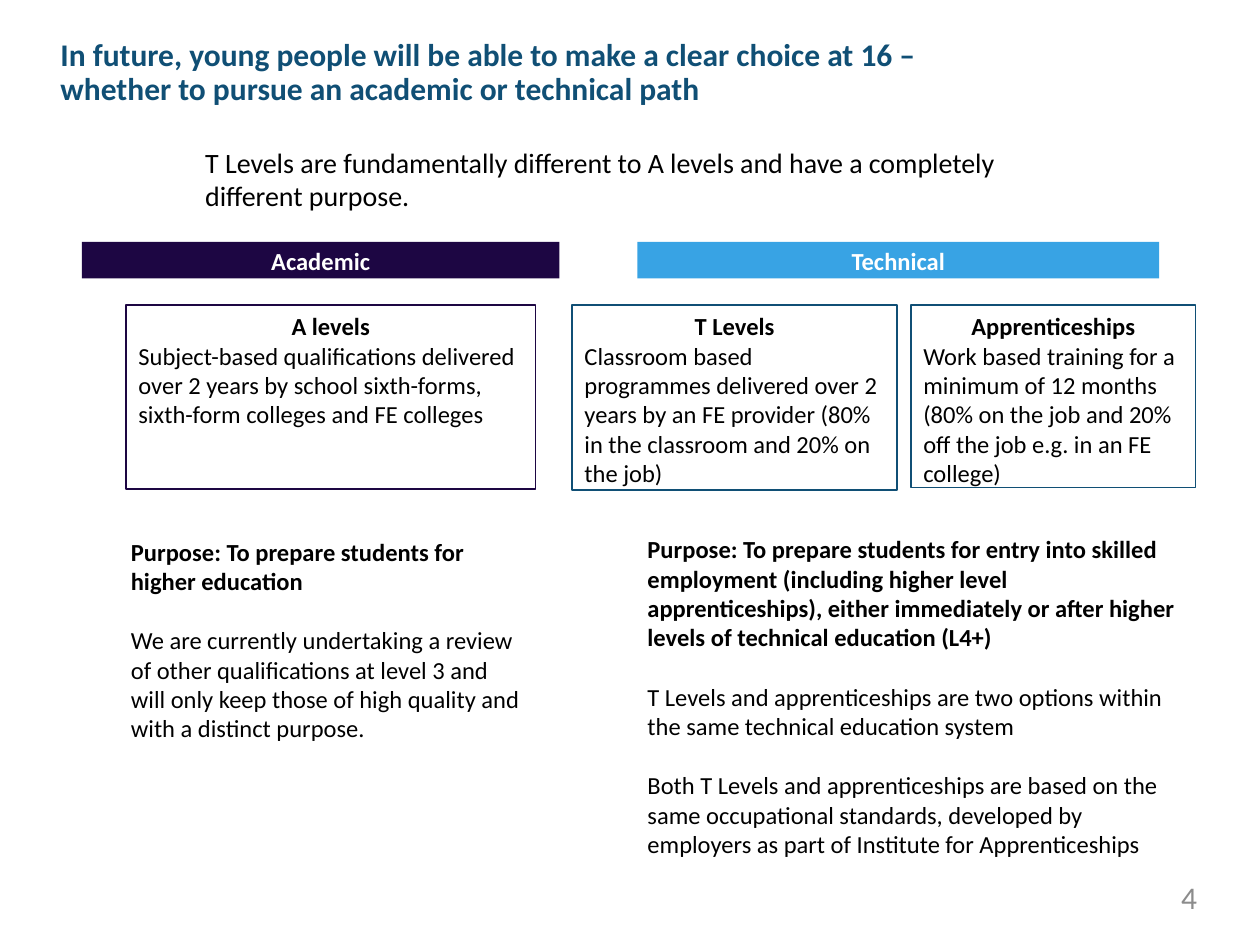
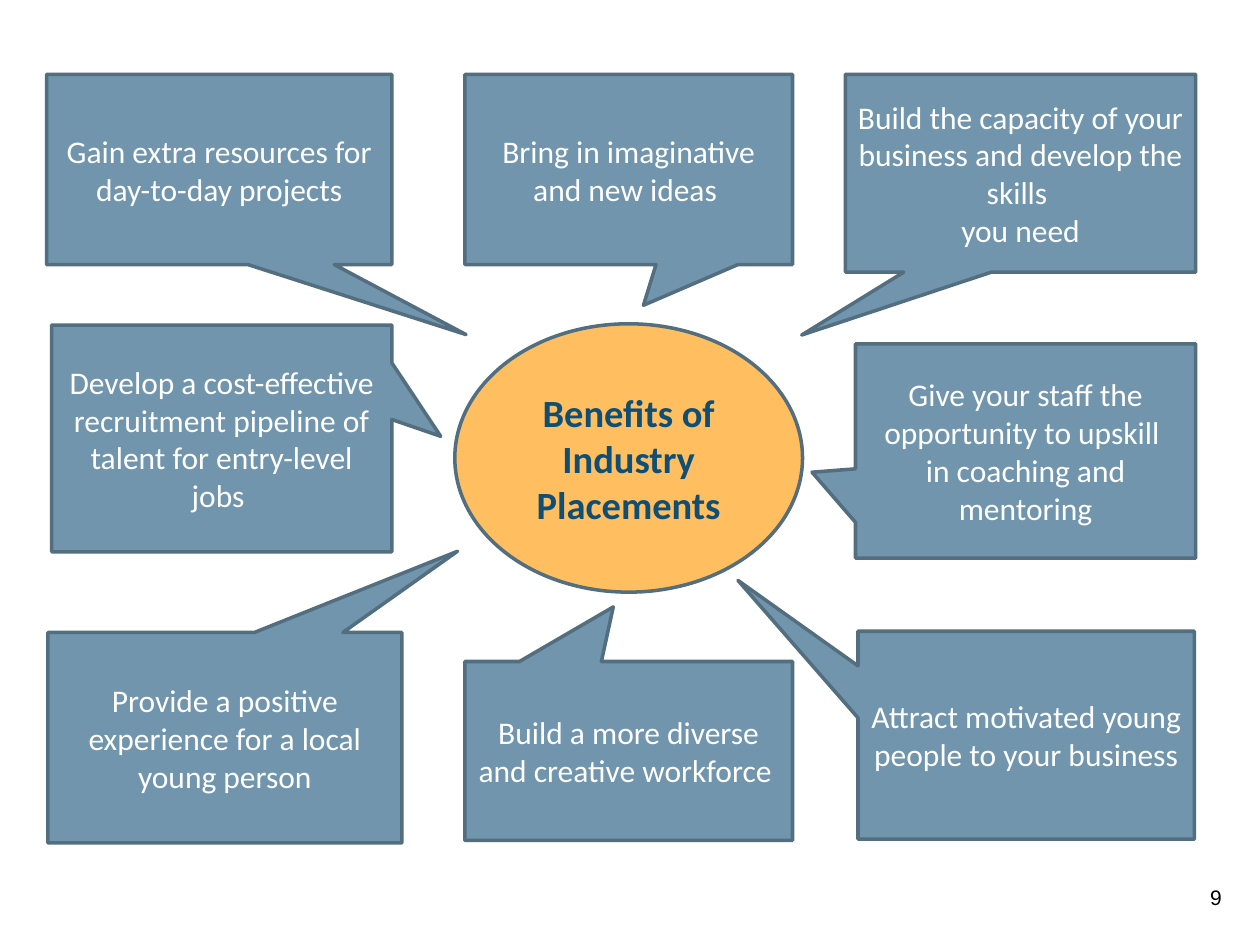
"""Build two slides on T Levels and the benefits of industry placements."""

from dataclasses import dataclass
from typing import Optional

from pptx import Presentation
from pptx.dml.color import RGBColor
from pptx.enum.shapes import MSO_SHAPE as Shape
from pptx.enum.text import MSO_ANCHOR as Anchor, MSO_AUTO_SIZE as AutoSize, PP_ALIGN as Align
from pptx.util import Inches, Pt

NAVY = RGBColor(0x10, 0x4F, 0x75)
PURPLE = RGBColor(0x1D, 0x06, 0x43)
SKY = RGBColor(0x38, 0xA3, 0xE4)
STEEL = RGBColor(0x70, 0x95, 0xAC)
SLATE = RGBColor(0x53, 0x6E, 0x7F)
AMBER = RGBColor(0xFF, 0xBF, 0x61)
GREY = RGBColor(0x8C, 0x8C, 0x8C)
BLACK = RGBColor(0x00, 0x00, 0x00)
WHITE = RGBColor(0xFF, 0xFF, 0xFF)
FONT = "Calibri"
PARAGRAPH_GAP = 17


@dataclass(frozen=True)
class Area:
    left: float
    top: float
    width: float
    height: float


@dataclass(frozen=True)
class Band:
    area: Area
    label: str
    color: RGBColor


@dataclass(frozen=True)
class Route:
    area: Area
    name: str
    description: str
    border: RGBColor


@dataclass(frozen=True)
class Purpose:
    area: Area
    statement: str
    details: tuple[str, ...]


@dataclass(frozen=True)
class Benefit:
    area: Area
    text: str
    pointer: tuple[float, float]


BANDS = (
    Band(Area(0.65, 1.92, 3.79, 0.29), "Academic", PURPLE),
    Band(Area(5.06, 1.92, 4.14, 0.29), "Technical", SKY),
)

ROUTES = (
    Route(Area(1, 2.42, 3.25, 1.46), "A levels",
          "Subject-based qualifications delivered over 2 years by school sixth-forms, "
          "sixth-form colleges and FE colleges", PURPLE),
    Route(Area(4.54, 2.42, 2.58, 1.47), "T Levels",
          "Classroom based programmes delivered over 2 years by an FE provider "
          "(80% in the classroom and 20% on the job)", NAVY),
    Route(Area(7.23, 2.42, 2.26, 1.45), "Apprenticeships",
          "Work based training for a minimum of 12 months "
          "(80% on the job and 20% off the job e.g. in an FE college)", NAVY),
)

PURPOSES = (
    Purpose(Area(0.94, 4.21, 3.35, 1.99),
            "Purpose: To prepare students for higher education",
            ("We are currently undertaking a review of other qualifications at level 3 and "
             "will only keep those of high quality and with a distinct purpose.",)),
    Purpose(Area(5.04, 4.19, 4.39, 2.93),
            "Purpose: To prepare students for entry into skilled employment (including higher "
            "level apprenticeships), either immediately or after higher levels of technical "
            "education (L4+)",
            ("T Levels and apprenticeships are two options within the same technical "
             "education system",
             "Both T Levels and apprenticeships are based on the same occupational standards, "
             "developed by employers as part of Institute for Apprenticeships")),
)

BENEFITS = (
    Benefit(Area(0.37, 0.59, 2.74, 1.51),
            "Gain extra resources for day-to-day projects", (0.715, 0.868)),
    Benefit(Area(3.69, 0.59, 2.6, 1.51),
            "Bring in imaginative and new ideas ", (0.045, 0.714)),
    Benefit(Area(6.71, 0.59, 2.78, 1.57),
            "Build the capacity of your business and develop the skills \nyou need",
            (-0.625, 0.818)),
    Benefit(Area(0.41, 2.58, 2.7, 1.8),
            "Develop a cost-effective recruitment pipeline of talent for entry-level jobs ",
            (0.644, -0.009)),
    Benefit(Area(6.79, 2.73, 2.7, 1.7),
            "Give your staff the opportunity to upskill \nin coaching and mentoring",
            (-0.628, 0.099)),
    Benefit(Area(0.38, 5.02, 2.81, 1.67),
            "Provide a positive experience for a local young person", (0.657, -0.886)),
    Benefit(Area(3.69, 5.25, 2.6, 1.42),
            "Build a more diverse and creative workforce ", (-0.047, -0.805)),
    Benefit(Area(6.81, 5.01, 2.67, 1.65),
            "Attract motivated young people to your business", (-0.857, -0.745)),
)


def lengths(area: Area) -> tuple:
    """Convert an area to slide lengths."""
    return tuple(Inches(value) for value in (area.left, area.top, area.width, area.height))


def write(frame, text: str, *, size: float = 14, color: RGBColor = BLACK, bold: bool = False,
          align: Align = Align.LEFT, font: str = FONT, gap: float = 0):
    """Add one formatted paragraph to a text frame and return it."""
    paragraph = frame.add_paragraph() if frame.text else frame.paragraphs[0]
    paragraph.text = text.replace("\n", "\v")
    paragraph.alignment = align
    paragraph.space_before = Pt(gap)
    for run in paragraph.runs:
        run.font.name = font
        run.font.size = Pt(size)
        run.font.bold = bold
        run.font.color.rgb = color
    return paragraph


def set_insets(frame, horizontal: float, vertical: float) -> None:
    """Set the inner margins of a text frame."""
    frame.margin_left = frame.margin_right = Inches(horizontal)
    frame.margin_top = frame.margin_bottom = Inches(vertical)


def add_text_frame(slide, area: Area, anchor: Anchor = Anchor.TOP):
    """Add a wrapping text box and return its frame."""
    frame = slide.shapes.add_textbox(*lengths(area)).text_frame
    frame.word_wrap = True
    frame.vertical_anchor = anchor
    return frame


def add_panel(slide, area: Area, fill: RGBColor, *, kind: Shape = Shape.RECTANGLE,
              border: Optional[RGBColor] = None, border_width: float = 1,
              anchor: Anchor = Anchor.MIDDLE):
    """Add a flat filled shape and return it."""
    shape = slide.shapes.add_shape(kind, *lengths(area))
    shape.shadow.inherit = False
    shape.fill.solid()
    shape.fill.fore_color.rgb = fill
    if border is None:
        shape.line.fill.background()
    else:
        shape.line.color.rgb = border
        shape.line.width = Pt(border_width)
    shape.text_frame.word_wrap = True
    shape.text_frame.vertical_anchor = anchor
    return shape


def add_title(slide, text: str) -> None:
    """Place and format the title placeholder."""
    title = slide.shapes.title
    title.left, title.top, title.width, title.height = lengths(Area(0.42, 0.35, 7.08, 0.47))
    frame = title.text_frame
    frame.auto_size = AutoSize.NONE
    frame.word_wrap = True
    frame.vertical_anchor = Anchor.MIDDLE
    set_insets(frame, 0.06, 0.03)
    write(frame, text, size=18, color=NAVY, bold=True).line_spacing = 0.9


def build_choice_slide(presentation) -> None:
    """Build the slide comparing academic and technical paths."""
    slide = presentation.slides.add_slide(presentation.slide_layouts.get_by_name("Title Only"))
    add_title(slide, "In future, young people will be able to make a clear choice at 16 – "
                     "whether to pursue an academic or technical path")
    introduction = add_text_frame(slide, Area(1.53, 1.15, 6.75, 0.54), Anchor.MIDDLE)
    write(introduction, "T Levels are fundamentally different to A levels and have a "
                        "completely different purpose.", size=16)
    for band in BANDS:
        panel = add_panel(slide, band.area, band.color)
        write(panel.text_frame, band.label, color=WHITE, bold=True, align=Align.CENTER)
    for route in ROUTES:
        panel = add_panel(slide, route.area, WHITE, border=route.border, anchor=Anchor.TOP)
        write(panel.text_frame, route.name, bold=True, align=Align.CENTER)
        write(panel.text_frame, route.description)
    for purpose in PURPOSES:
        frame = add_text_frame(slide, purpose.area)
        write(frame, purpose.statement, bold=True)
        for detail in purpose.details:
            write(frame, detail, gap=PARAGRAPH_GAP)
    page_number = add_text_frame(slide, Area(7.2, 6.97, 2.3, 0.38))
    set_insets(page_number, 0, 0)
    write(page_number, "4", size=18, color=GREY, align=Align.RIGHT)


def build_benefits_slide(presentation) -> None:
    """Build the slide with benefits pointing at a central ellipse."""
    slide = presentation.slides.add_slide(presentation.slide_layouts.get_by_name("Blank"))
    centre = add_panel(slide, Area(3.61, 2.57, 2.76, 2.13), AMBER, kind=Shape.OVAL,
                       border=SLATE, border_width=2)
    write(centre.text_frame, "Benefits of Industry Placements", size=22, color=NAVY,
          bold=True, align=Align.CENTER)
    for benefit in BENEFITS:
        callout = add_panel(slide, benefit.area, STEEL, kind=Shape.RECTANGULAR_CALLOUT,
                            border=SLATE, border_width=2)
        callout.adjustments[0], callout.adjustments[1] = benefit.pointer
        write(callout.text_frame, benefit.text, size=18, color=WHITE, align=Align.CENTER)
    page_number = add_text_frame(slide, Area(9.43, 6.97, 0.44, 0.3))
    write(page_number, "9", size=12, align=Align.CENTER, font="Arial")


def main() -> None:
    """Create and save the presentation."""
    presentation = Presentation()
    presentation.slide_width = Inches(10)
    presentation.slide_height = Inches(7.5)
    build_choice_slide(presentation)
    build_benefits_slide(presentation)
    presentation.save("out.pptx")


if __name__ == "__main__":
    main()
